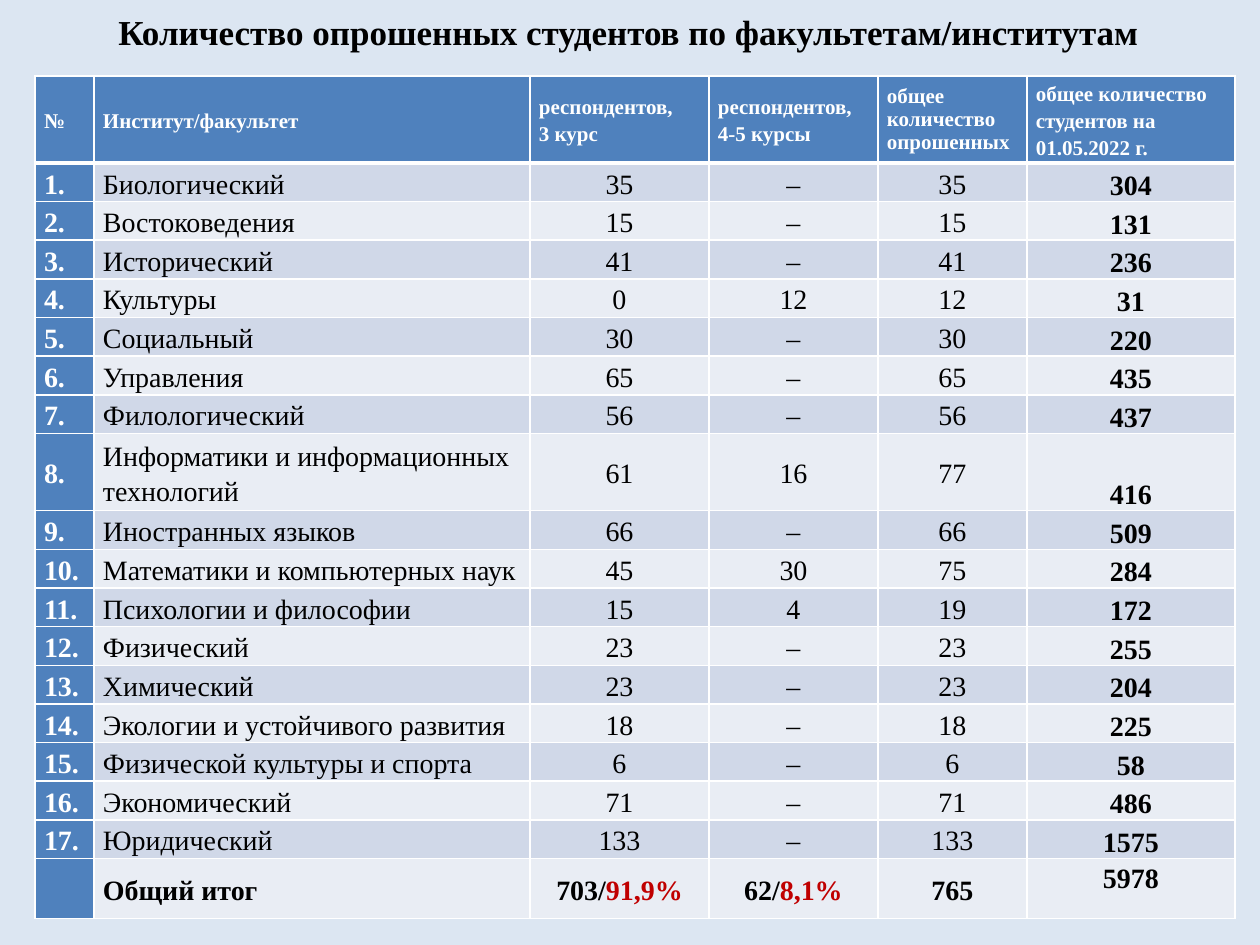
from pptx import Presentation
from pptx.dml.color import RGBColor
from pptx.enum.text import MSO_ANCHOR, MSO_AUTO_SIZE, PP_ALIGN
from pptx.oxml.ns import qn
from pptx.util import Pt
from lxml.etree import SubElement

SCALE = 914400 / 126
BLUE, WHITE, BLACK, RED = "4F81BD", "FFFFFF", "000000", "C00000"
BANDS = ["D0D8E8", "E9EDF4"]
SIDES = ["lnL", "lnR", "lnT", "lnB"]
WIDTHS = [59, 436, 179, 169, 149, 208]
HEAD = ["№", "Институт/факультет", "респондентов,\n3 курс", "респондентов,\n4-5 курсы",
        "общее количество опрошенных", "общее количество студентов на 01.05.2022 г."]
ROWS = [
    ("Биологический", "35", "–", "35", "304"),
    ("Востоковедения", "15", "–", "15", "131"),
    ("Исторический", "41", "–", "41", "236"),
    ("Культуры", "0", "12", "12", "31"),
    ("Социальный", "30", "–", "30", "220"),
    ("Управления", "65", "–", "65", "435"),
    ("Филологический", "56", "–", "56", "437"),
    ("Информатики и информационных технологий", "61", "16", "77", "416"),
    ("Иностранных языков", "66", "–", "66", "509"),
    ("Математики и компьютерных наук", "45", "30", "75", "284"),
    ("Психологии и философии", "15", "4", "19", "172"),
    ("Физический", "23", "–", "23", "255"),
    ("Химический", "23", "–", "23", "204"),
    ("Экологии и устойчивого развития", "18", "–", "18", "225"),
    ("Физической культуры и спорта", "6", "–", "6", "58"),
    ("Экономический", "71", "–", "71", "486"),
    ("Юридический", "133", "–", "133", "1575"),
]
TOTAL = ["", "Общий итог", "703/|91,9%", "62/|8,1%", "765", "5978"]


def px(n):
    return round(n * SCALE)


def rgb(text):
    return RGBColor.from_string(text)


def put(item, values):
    for name, value in values.items():
        setattr(item, name, value)


class Deck:
    font = "Times New Roman"

    def __init__(self, show, back):
        self.slide = show.slides.add_slide(show.slide_layouts[5])
        fill = self.slide.background.fill
        fill.solid()
        fill.fore_color.rgb = rgb(back)

    def text(self, frame, text, size, color, bold, align, gap=1.0):
        for i, line in enumerate(text.split("\n")):
            para = frame.add_paragraph() if i else frame.paragraphs[0]
            put(para, {"alignment": align, "line_spacing": gap})
            for part, tint in zip(line.split("|"), [color, RED]):
                run = para.add_run()
                run.text = part
                put(run.font, {"name": self.font, "size": Pt(size), "bold": bold})
                run.font.color.rgb = rgb(tint)

    def title(self, text, x, y, w, h):
        box = self.slide.shapes.title
        put(box, {"left": px(x), "top": px(y), "width": px(w), "height": px(h)})
        put(box.text_frame, {"word_wrap": True, "auto_size": MSO_AUTO_SIZE.SHAPE_TO_FIT_TEXT,
                             "vertical_anchor": MSO_ANCHOR.TOP})
        self.text(box.text_frame, text, 20, BLACK, True, PP_ALIGN.CENTER)

    def table(self, x, y, widths, heights):
        grid = self.slide.shapes.add_table(len(heights), len(widths), px(x), px(y),
                                           px(sum(widths)), px(sum(heights))).table
        for col, w in zip(grid.columns, widths):
            col.width = px(w)
        for row, h in zip(grid.rows, heights):
            row.height = px(h)
        return grid

    def cell(self, cell, text, fill, anchor, thick, **style):
        put(cell, {"margin_left": px(9), "margin_right": px(9), "margin_top": 0,
                   "margin_bottom": 0, "vertical_anchor": anchor})
        props = cell._tc.get_or_add_tcPr()
        for side in SIDES:
            line = SubElement(props, qn("a:" + side), w=str(Pt(3 if side == thick else 1)))
            SubElement(SubElement(line, qn("a:solidFill")), qn("a:srgbClr"), val=WHITE)
        cell.fill.solid()
        cell.fill.fore_color.rgb = rgb(fill)
        if text:
            self.text(cell.text_frame, text, **style)


def main():
    show = Presentation()
    put(show, {"slide_width": px(1260), "slide_height": px(945)})
    deck = Deck(show, "DCE6F2")
    deck.title("Количество опрошенных студентов по факультетам/институтам", 68, 4, 1121, 55)

    body = [[f"{n}.", *row] for n, row in enumerate(ROWS, 1)]
    lines = [HEAD, *body, TOTAL]
    last = len(lines) - 1
    fixed = {0: 87, 8: 77, last: 60}
    step = (843 - sum(fixed.values())) / (len(lines) - len(fixed))
    grid = deck.table(35, 76, WIDTHS, [fixed.get(r, step) for r in range(len(lines))])

    for r, line in enumerate(lines):
        for c, text in enumerate(line):
            head, edge = r == 0, c == 0
            anchor = MSO_ANCHOR.MIDDLE
            if c == 5 and not head:
                anchor = MSO_ANCHOR.TOP if r == last else MSO_ANCHOR.BOTTOM
            deck.cell(grid.cell(r, c), text, BLUE if head or edge else BANDS[(r - 1) % 2],
                      anchor, {0: "lnB", 1: "lnT"}.get(r),
                      size=12 if head else 16,
                      color=WHITE if head or edge else BLACK,
                      bold=head or r == last or c in (0, 5),
                      align=PP_ALIGN.LEFT if head or c < 2 else PP_ALIGN.CENTER,
                      gap=1.0 if head and c == 4 else 1.15)
    show.save("out.pptx")


if __name__ == "__main__":
    main()
